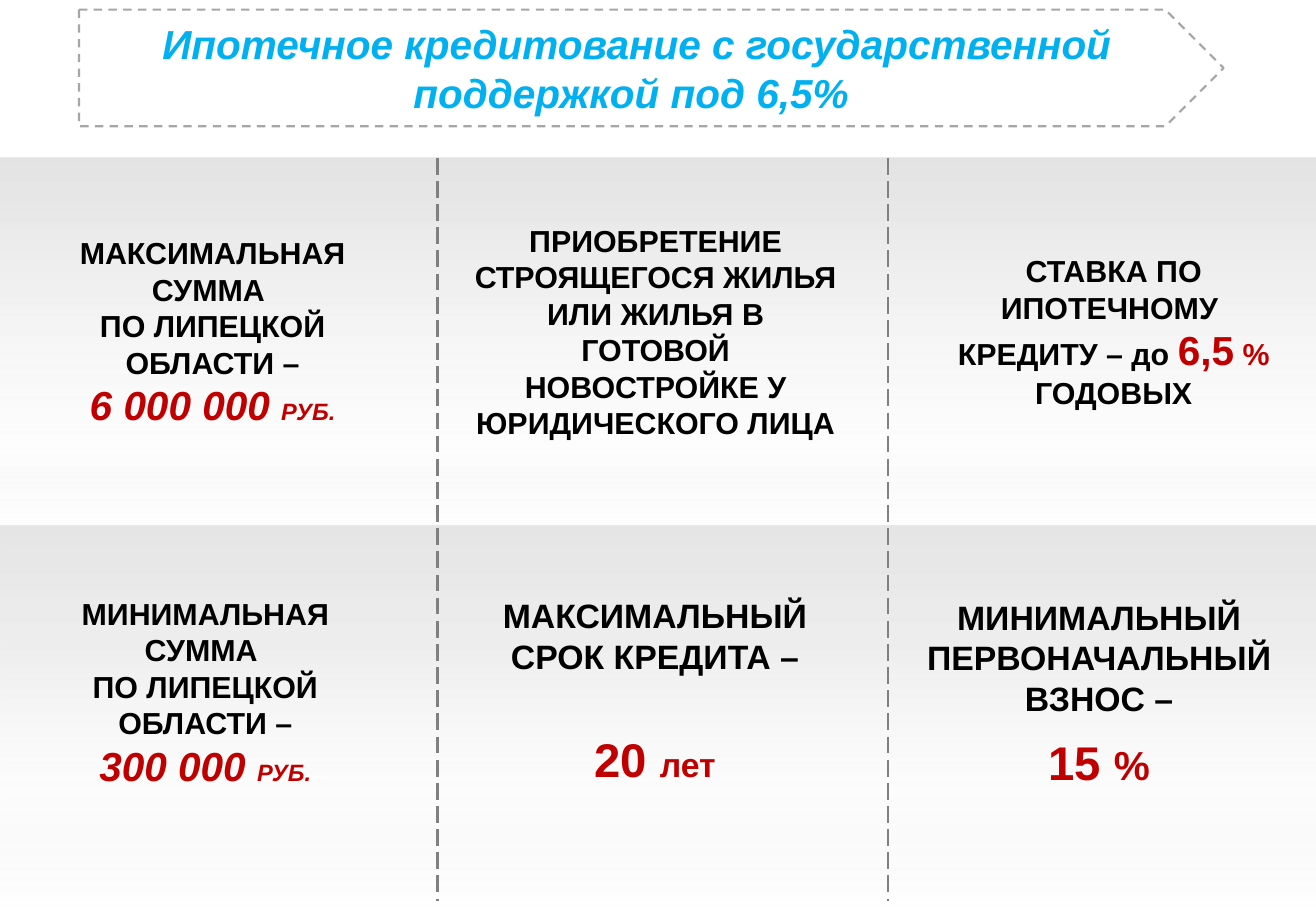
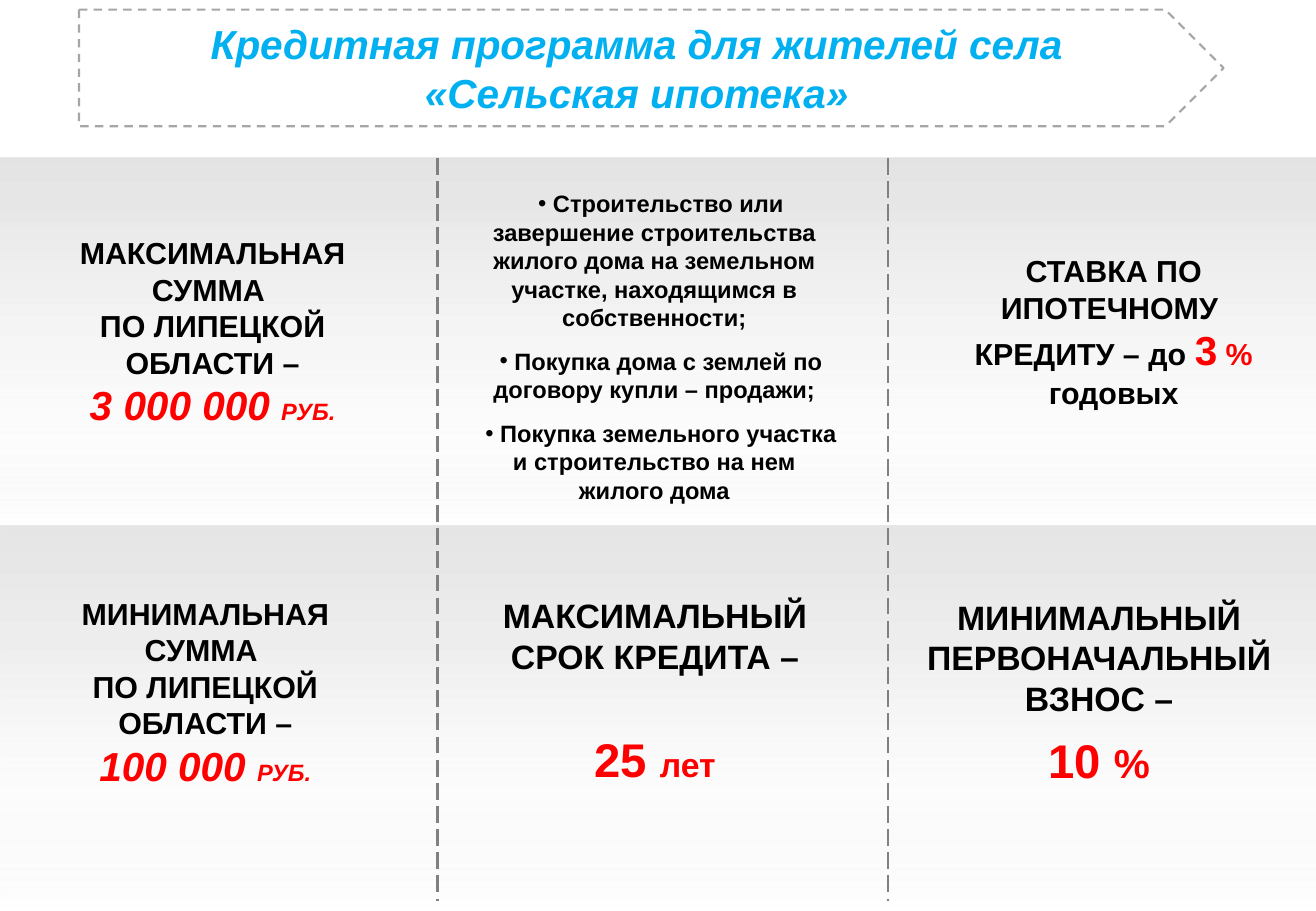
from lxml import etree
from pptx import Presentation
from pptx.dml.color import RGBColor
from pptx.enum.dml import MSO_LINE, MSO_PATTERN
from pptx.enum.shapes import MSO_CONNECTOR, MSO_SHAPE
from pptx.enum.text import MSO_ANCHOR, PP_ALIGN
from pptx.oxml.ns import qn
from pptx.util import Inches, Pt

RECT, ARROW = MSO_SHAPE.RECTANGLE, MSO_SHAPE.PENTAGON
STRAIGHT = MSO_CONNECTOR.STRAIGHT
DASH, LONG_DASH = MSO_LINE.DASH, MSO_LINE.LONG_DASH
DIAGONAL = MSO_PATTERN.LIGHT_UPWARD_DIAGONAL
CENTER, MIDDLE = PP_ALIGN.CENTER, MSO_ANCHOR.MIDDLE

FONT = "Arial"
COLORS = {
    "white": "FFFFFF", "text": "000000", "title": "00B0F0",
    "frame": "A6A6A6", "divider": "808080",
    "dark_red": "C00000", "red": "FF0000",
}

# top, height, gradient stops (position %, colour, opacity %)
BANDS = [
    (1.3, 3.03, [(0, "FFFFFF", 100), (21, "F2F2F2", 14),
                 (65, "D9D9D9", 38), (99, "BFBFBF", 43)]),
    (4.33, 3.17, [(0, "FFFFFF", 100), (31, "F2F2F2", 17),
                  (66, "D9D9D9", 41), (98, "BFBFBF", 39)]),
]
DIVIDERS = [3.6, 7.31]
TITLE_BOX = (0.65, 0.08, 9.42, 0.96)
CELLS = {
    "max_sum": (0.25, 1.88, 3, 1.72),
    "purpose": (3.79, 1.78, 3.21, 1.92),
    "purpose_list": (3.78, 1.51, 3.21, 2.83),
    "rate": (7.49, 2.03, 3.35, 1.41),
    "min_sum": (0.19, 4.85, 3, 1.72),
    "term": (3.88, 4.85, 3.02, 1.72),
    "deposit": (7.49, 4.86, 3.11, 1.78),
}

SLIDES = [
    {
        "title": ["Ипотечное кредитование с государственной поддержкой под 6,5% "],
        "accent": "dark_red",
        "max": "6 000 000 ", "min": "300 000 ",
        "purpose": "ПРИОБРЕТЕНИЕ СТРОЯЩЕГОСЯ ЖИЛЬЯ ИЛИ ЖИЛЬЯ В ГОТОВОЙ "
                   "НОВОСТРОЙКЕ У ЮРИДИЧЕСКОГО ЛИЦА",
        "rate": "6,5", "yearly": " ГОДОВЫХ",
        "term": "20 ", "deposit": "15 ", "deposit_gap": 9.2,
    },
    {
        "title": ["Кредитная программа для жителей села", "«Сельская ипотека»"],
        "accent": "red",
        "max": "3 000 000 ", "min": "100 000 ",
        "purpose": [
            " Строительство или завершение строительства жилого дома на "
            "земельном участке, находящимся в собственности;",
            " Покупка дома с землей по договору купли – продажи;",
            " Покупка земельного участка и строительство на нем жилого дома",
        ],
        "rate": "3", "yearly": " годовых",
        "term": "25 ", "deposit": "10 ", "deposit_gap": 8,
    },
]


def rgb(name):
    return RGBColor.from_string(COLORS[name])


def inches(values):
    return [Inches(v) for v in values]


def para(*runs, gap=0, bullet=False):
    """Describe a paragraph; each run is (text, size, colour[, italic])."""
    return {"runs": runs, "gap": gap, "bullet": bullet}


def add_bullet(p):
    pPr = p._p.get_or_add_pPr()
    pPr.set("marL", "0")
    pPr.set("indent", str(Inches(0.11)))
    etree.SubElement(pPr, qn("a:buFont")).set("typeface", FONT)
    etree.SubElement(pPr, qn("a:buChar")).set("char", "•")


def write(tf, paras):
    tf.word_wrap = True
    for i, item in enumerate(paras):
        p = tf.paragraphs[0] if i == 0 else tf.add_paragraph()
        p.alignment = CENTER
        if item["bullet"]:
            add_bullet(p)
        if item["gap"]:
            p.space_before = Pt(item["gap"])
        for text, size, color, *italic in item["runs"]:
            r = p.add_run()
            r.text = text
            r.font.name, r.font.size, r.font.bold = FONT, Pt(size), True
            r.font.italic = bool(italic)
            r.font.color.rgb = rgb(color)


def add_band(s, top, height, stops):
    sp = s.shapes.add_shape(RECT, *inches((0, top, 10.84, height)))
    sp.shadow.inherit = False
    sp.line.fill.background()
    sp.fill.gradient()
    sp.fill.gradient_angle = 90
    gs_list = sp._element.spPr.find(qn("a:gradFill")).find(qn("a:gsLst"))
    for old in list(gs_list):
        gs_list.remove(old)
    for pos, color, opacity in stops:
        gs = etree.SubElement(gs_list, qn("a:gs"), pos=str(pos * 1000))
        clr = etree.SubElement(gs, qn("a:srgbClr"), val=color)
        etree.SubElement(clr, qn("a:alpha"), val=str(opacity * 1000))


def add_divider(s, x):
    line = s.shapes.add_connector(STRAIGHT, *inches((x, 1.3, x, 7.42)))
    line.line.color.rgb = rgb("divider")
    line.line.width = Pt(1.25)
    line.line.dash_style = LONG_DASH
    etree.SubElement(line._element.spPr, qn("a:effectLst"))


def add_title(s, lines):
    sp = s.shapes.add_shape(ARROW, *inches(TITLE_BOX))
    sp.shadow.inherit = False
    sp.fill.patterned()
    sp.fill.pattern = DIAGONAL
    sp.fill.fore_color.rgb = sp.fill.back_color.rgb = rgb("white")
    sp.line.color.rgb = rgb("frame")
    sp.line.width = Pt(1.25)
    sp.line.dash_style = DASH
    sp.text_frame.vertical_anchor = MIDDLE
    write(sp.text_frame, [para((t, 24, "title", True)) for t in lines])


def add_cell(s, name, paras):
    tb = s.shapes.add_textbox(*inches(CELLS[name]))
    write(tb.text_frame, paras)


def sum_paras(heading, amount, accent):
    labels = [*heading, "ПО ЛИПЕЦКОЙ ОБЛАСТИ –"]
    return [para((t, 18, "text")) for t in labels] + [
        para((amount, 24, accent, True), ("РУБ.", 14, accent, True))]


def add_purpose(s, purpose):
    if isinstance(purpose, str):
        add_cell(s, "purpose", [para((purpose, 18, "text"))])
    else:
        add_cell(s, "purpose_list", [
            para((t, 14, "text"), gap=9.2 if i else 0, bullet=True)
            for i, t in enumerate(purpose)])


def build_slide(prs, data):
    s = prs.slides.add_slide(prs.slide_layouts[6])
    accent = data["accent"]
    for band in BANDS:
        add_band(s, *band)
    add_cell(s, "max_sum", sum_paras(["МАКСИМАЛЬНАЯ СУММА "], data["max"], accent))
    add_purpose(s, data["purpose"])
    add_cell(s, "rate", [
        para(("СТАВКА ПО ИПОТЕЧНОМУ ", 18, "text")),
        para(("КРЕДИТУ – до ", 18, "text"), (data["rate"], 24, accent),
             (" %", 18, accent), (data["yearly"], 18, "text"))])
    add_cell(s, "min_sum", sum_paras(["МИНИМАЛЬНАЯ", "СУММА "], data["min"], accent))
    add_cell(s, "term", [
        para(("МАКСИМАЛЬНЫЙ СРОК КРЕДИТА –", 20, "text")),
        para((data["term"], 28, accent), ("лет", 20, accent), gap=32.2)])
    add_cell(s, "deposit", [
        para(("МИНИМАЛЬНЫЙ ПЕРВОНАЧАЛЬНЫЙ ВЗНОС –", 20, "text")),
        para((data["deposit"], 28, accent), ("%", 24, accent),
             gap=data["deposit_gap"])])
    for x in DIVIDERS:
        add_divider(s, x)
    add_title(s, data["title"])


def main():
    prs = Presentation()
    prs.slide_width, prs.slide_height = inches((10.83, 7.5))
    for data in SLIDES:
        build_slide(prs, data)
    prs.save("out.pptx")


if __name__ == "__main__":
    main()
